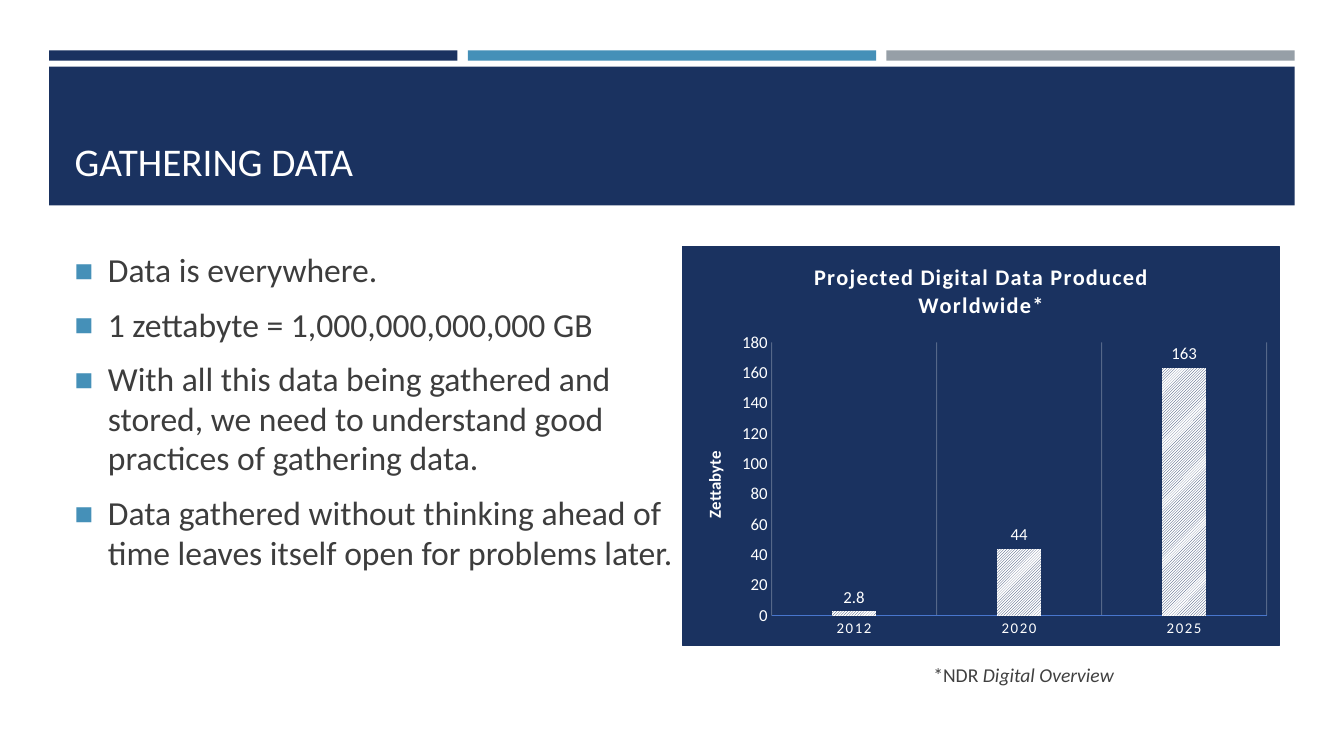
from lxml import etree
from pptx import Presentation, util as u
from pptx.chart.data import CategoryChartData
from pptx.dml.color import RGBColor
from pptx.enum import chart as ch, dml, shapes, text
from pptx.oxml import parse_xml
from pptx.oxml.ns import nsdecls, qn

TITLE = "GATHERING DATA"
POINTS = [
    "Data is everywhere.",
    "1 zettabyte = 1,000,000,000,000 GB",
    "With all this data being gathered and stored, we need to understand good "
    "practices of gathering data.",
    "Data gathered without thinking ahead of time leaves itself open for problems later.",
]
CHART_TITLE = ["Projected Digital Data Produced", "Worldwide*"]
AXIS_TITLE = "Zettabyte"
ZETTABYTES = {"2012": 2.8, "2020": 44, "2025": 163}
CREDIT = [("*NDR ", False), ("Digital Overview", True)]

FONT = "Calibri"
COLORS = {"navy": "1A3260", "blue": "4590B8", "gray": "969FA7", "white": "FFFFFF",
          "body": "3D3D3D", "credit": "404040", "axis": "4876CD"}
# Lengths in cm
LEFT, WIDTH = 1.24, 31.39
STRIPE_TOP, STRIPE_HEIGHT, STRIPE_GAP = 1.27, 0.26, 0.26
CONTENT_TOP, CONTENT_HEIGHT = 6.2, 10.08
PLOT = {"x": 0.149, "y": 0.24, "w": 0.83, "h": 0.685}


def rgb(name):
    return RGBColor.from_string(COLORS[name])


def box(left, top, width, height):
    return [u.Cm(v) for v in (left, top, width, height)]


def style(font, size, color, bold=False, italic=False):
    font.name, font.size, font.bold, font.italic = FONT, u.Pt(size), bold, italic
    font.color.rgb = rgb(color)


def add_run(paragraph, words, size, color, **looks):
    run = paragraph.add_run()
    run.text = words
    style(run.font, size, color, **looks)
    return run


def add_bar(slide, color, *place):
    bar = slide.shapes.add_shape(shapes.MSO_SHAPE.RECTANGLE, *box(*place))
    bar.shadow.inherit = False
    bar.fill.solid()
    bar.fill.fore_color.rgb = rgb(color)
    bar.line.fill.background()


def add_frame(slide, *place, wrap=True):
    frame = slide.shapes.add_textbox(*box(*place)).text_frame
    frame.word_wrap = wrap
    return frame


def add_bullet(paragraph):
    props = paragraph._p.get_or_add_pPr()
    props.set("marL", str(u.Cm(0.84)))
    props.set("indent", str(u.Cm(-0.84)))
    color = etree.SubElement(props, qn("a:buClr"))
    etree.SubElement(color, qn("a:srgbClr"), val=COLORS["blue"])
    etree.SubElement(props, qn("a:buSzPct"), val="92000")
    etree.SubElement(props, qn("a:buFont"), typeface="Arial")
    etree.SubElement(props, qn("a:buChar"), char="■")


def add_header(slide):
    stripe = (WIDTH - 2 * STRIPE_GAP) / 3
    for i, color in enumerate(("navy", "blue", "gray")):
        add_bar(slide, color, LEFT + i * (stripe + STRIPE_GAP), STRIPE_TOP,
                stripe, STRIPE_HEIGHT)
    add_bar(slide, "navy", LEFT, 1.68, WIDTH, 3.5)
    heading = add_frame(slide, 1.63, 2.03, 30.63, 2.74)
    heading.vertical_anchor = text.MSO_ANCHOR.BOTTOM
    add_run(heading.paragraphs[0], TITLE, 28, "white")


def add_points(slide):
    frame = add_frame(slide, 1.63, CONTENT_TOP, 16, CONTENT_HEIGHT)
    for i, point in enumerate(POINTS):
        paragraph = frame.add_paragraph() if i else frame.paragraphs[0]
        paragraph.line_spacing = 0.98
        paragraph.space_before = u.Pt(4.8 if i else 0)
        paragraph.space_after = u.Pt(6)
        add_bullet(paragraph)
        add_run(paragraph, point, 24, "body")


def style_axes(chart):
    years, amounts = chart.category_axis, chart.value_axis
    for axis, size in ((years, 10.6), (amounts, 12)):
        axis.major_tick_mark = axis.minor_tick_mark = ch.XL_TICK_MARK.NONE
        style(axis.tick_labels.font, size, "white")
    for props in years._element.xpath("c:txPr//a:defRPr"):
        props.set("spc", "120")
    years.format.line.color.rgb = rgb("axis")
    years.format.line.width = u.Pt(0.25)
    years.has_major_gridlines = True
    grid = years.major_gridlines.format.line
    grid.color.rgb = rgb("white")
    grid.width = u.Pt(0.75)
    for color in years._element.xpath("c:majorGridlines//a:srgbClr"):
        etree.SubElement(color, qn("a:alpha"), val="25000")

    amounts.has_major_gridlines = False
    amounts.minimum_scale, amounts.maximum_scale, amounts.major_unit = 0, 180, 20
    amounts.format.line.fill.background()
    label = amounts.axis_title.text_frame
    add_run(label.paragraphs[0], AXIS_TITLE, 12, "white", bold=True)
    label._txBody.bodyPr.set("rot", "-5400000")
    label._txBody.bodyPr.set("vert", "horz")


def style_bars(chart):
    plot = chart.plots[0]
    plot.gap_width, plot.overlap, plot.vary_by_categories = 269, -20, False
    fill = plot.series[0].format.fill
    fill.patterned()
    fill.pattern = dml.MSO_PATTERN.LIGHT_UPWARD_DIAGONAL
    fill.fore_color.rgb, fill.back_color.rgb = rgb("navy"), rgb("white")
    plot.has_data_labels = True
    labels = plot.data_labels
    labels.show_value = True
    labels.position = ch.XL_LABEL_POSITION.OUTSIDE_END
    style(labels.font, 12, "white")


def style_background(chart):
    """Fill the chart area and fix the inner plot area."""
    navy = f'<a:solidFill><a:srgbClr val="{COLORS["navy"]}"/></a:solidFill>'
    chart._chartSpace.find(qn("c:chart")).addnext(parse_xml(
        f'<c:spPr {nsdecls("c", "a")}>{navy}<a:ln w="9525">{navy}</a:ln></c:spPr>'))
    plot_area = chart._chartSpace.chart.plotArea
    for old in plot_area.findall(qn("c:layout")):
        plot_area.remove(old)
    layout = etree.Element(qn("c:layout"))
    manual = etree.SubElement(layout, qn("c:manualLayout"))
    settings = {"layoutTarget": "inner", "xMode": "edge", "yMode": "edge", **PLOT}
    for tag, value in settings.items():
        etree.SubElement(manual, qn(f"c:{tag}"), val=str(value))
    plot_area.insert(0, layout)


def add_data_chart(slide):
    data = CategoryChartData()
    data.categories = list(ZETTABYTES)
    data.add_series("Series 1", list(ZETTABYTES.values()))
    chart = slide.shapes.add_chart(
        ch.XL_CHART_TYPE.COLUMN_CLUSTERED,
        *box(17.19, CONTENT_TOP, 15.06, CONTENT_HEIGHT), data).chart
    chart.has_legend = False
    chart.font.name, chart.font.size = FONT, u.Pt(10)
    heading = chart.chart_title.text_frame
    for i, line in enumerate(CHART_TITLE):
        paragraph = heading.add_paragraph() if i else heading.paragraphs[0]
        run = add_run(paragraph, line, 16, "white", bold=True)
        run._r.get_or_add_rPr().set("spc", "100")
    chart.chart_title.include_in_layout = False
    style_axes(chart)
    style_bars(chart)
    style_background(chart)


def add_credit(slide):
    paragraph = add_frame(slide, 23.27, 16.59, 5.33, 0.86, wrap=False).paragraphs[0]
    for words, italic in CREDIT:
        add_run(paragraph, words, 14, "credit", italic=italic)


def main():
    deck = Presentation()
    deck.slide_width, deck.slide_height = u.Cm(33.87), u.Cm(19.05)
    slide = deck.slides.add_slide(deck.slide_layouts[6])
    add_header(slide)
    add_points(slide)
    add_data_chart(slide)
    add_credit(slide)
    deck.save("out.pptx")


if __name__ == "__main__":
    main()
